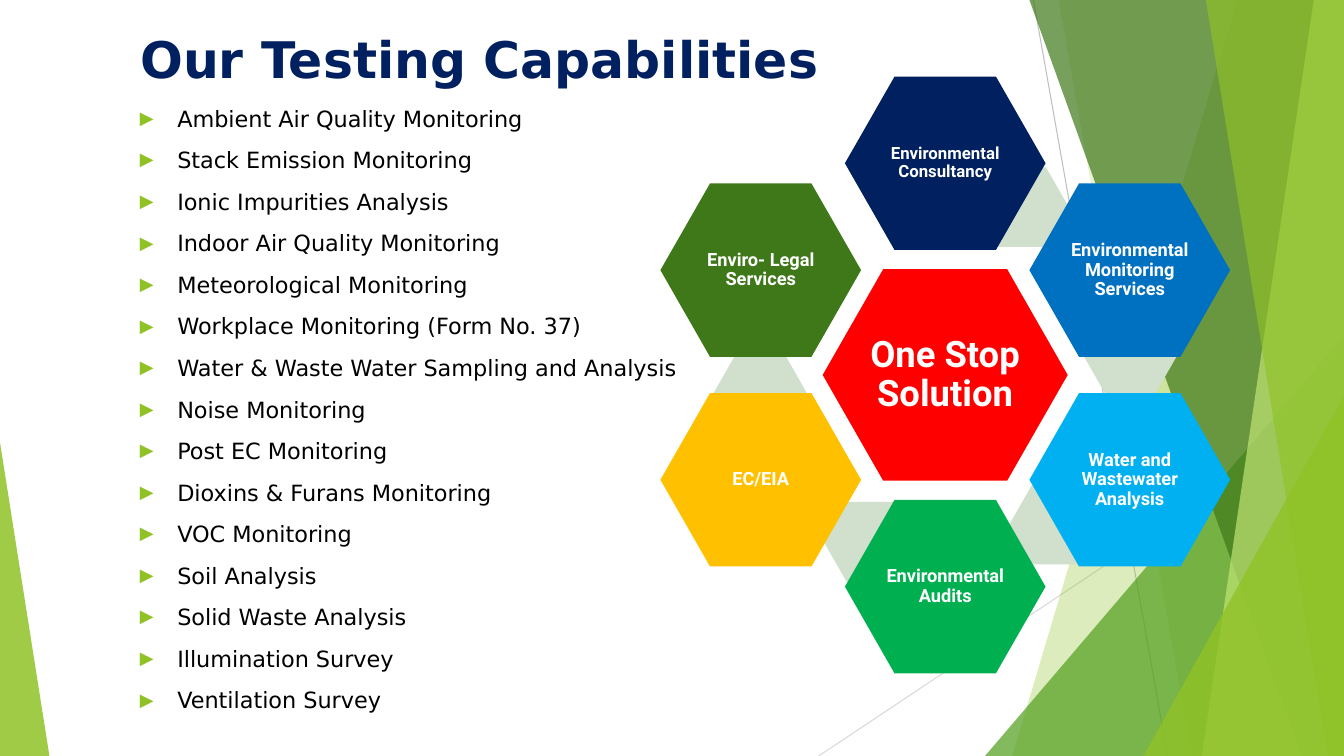
"""Build the testing capabilities slide with its ring of service hexagons."""
from dataclasses import dataclass
from typing import Optional

from lxml.etree import SubElement
from pptx import Presentation
from pptx.dml.color import RGBColor
from pptx.enum.shapes import MSO_CONNECTOR, MSO_SHAPE
from pptx.enum.text import MSO_ANCHOR, MSO_AUTO_SIZE, PP_ALIGN
from pptx.oxml.ns import qn
from pptx.util import Inches, Pt

WIDTH, HEIGHT = 13.33, 7.5
BODY_FONT, LABEL_FONT = "DejaVu Sans", "Roboto"

WHITE = RGBColor(0xFF, 0xFF, 0xFF)
BLACK = RGBColor(0x00, 0x00, 0x00)
NAVY = RGBColor(0x00, 0x20, 0x60)
BLUE = RGBColor(0x00, 0x70, 0xC0)
SKY = RGBColor(0x00, 0xB0, 0xF0)
GREEN = RGBColor(0x00, 0xB0, 0x50)
AMBER = RGBColor(0xFF, 0xC0, 0x00)
RED = RGBColor(0xFF, 0x00, 0x00)
FOREST = RGBColor(0x3F, 0x78, 0x19)
LEAF = RGBColor(0x54, 0xA0, 0x21)
LIME = RGBColor(0x90, 0xC2, 0x26)
PALE_LIME = RGBColor(0xC0, 0xE4, 0x74)
SAGE = RGBColor(0xD1, 0xDF, 0xCD)
MID_GREY = RGBColor(0xBF, 0xBF, 0xBF)
LIGHT_GREY = RGBColor(0xD9, 0xD9, 0xD9)


@dataclass
class Ray:
    """A thin background line."""
    start: tuple[float, float]
    end: tuple[float, float]
    color: RGBColor


@dataclass
class Panel:
    """A slanted panel reaching from its left edge to the right of the slide."""
    top_x: float
    bottom_x: float
    color: RGBColor
    opacity: int


@dataclass
class Wedge:
    """A right triangle standing on the bottom of the slide."""
    left: float
    top: float
    width: float
    peak: float
    color: RGBColor
    opacity: int


@dataclass
class Service:
    """A labelled hexagon, with the small hexagon that lies behind it."""
    label: str
    left: float
    top: float
    color: RGBColor
    chip: Optional[tuple[float, float]] = None
    size: float = 13
    width: float = 1.99
    height: float = 1.72
    inset: float = 0.02


RAYS = [
    Ray((10.25, 0), (11.58, HEIGHT), MID_GREY),
    Ray((WIDTH, 4.03), (8.12, HEIGHT), LIGHT_GREY),
]
BACKDROP = [
    Panel(12.27, 10.04, LIME, 30),
    Panel(10.5, 11.82, LIME, 20),
    Wedge(9.77, 3.33, 3.56, 1, LEAF, 72),
    Panel(10.21, 12.91, FOREST, 70),
    Panel(13.03, 11.92, PALE_LIME, 70),
    Panel(11.96, 13.17, LIME, 65),
    Wedge(11.34, 3.93, 1.99, 1, LIME, 80),
    Wedge(0, 4.39, 0.49, 0, LIME, 85),
]
LEFT_X, MIDDLE_X, RIGHT_X = 6.55, 8.38, 10.21
SERVICES = [
    Service("One Stop Solution", 8.16, 2.67, RED, None, 26, 2.43, 2.1, 0.04),
    Service("Environmental Consultancy", MIDDLE_X, 0.76, NAVY, (9.68, 1.66), 12),
    Service("Environmental Monitoring Services", RIGHT_X, 1.82, BLUE, (10.75, 3.14)),
    Service("Water and Wastewater Analysis", RIGHT_X, 3.9, SKY, (10.01, 4.81)),
    Service("Environmental Audits", MIDDLE_X, 4.96, GREEN, (8.17, 4.98)),
    Service("EC/EIA", LEFT_X, 3.9, AMBER, (7.08, 3.5)),
    Service("Enviro- Legal Services", LEFT_X, 1.82, FOREST),
]
CAPABILITIES = [
    "Ambient Air Quality Monitoring",
    "Stack Emission Monitoring",
    "Ionic Impurities Analysis",
    "Indoor Air Quality Monitoring",
    "Meteorological Monitoring",
    "Workplace Monitoring (Form No. 37)",
    "Water & Waste Water Sampling and Analysis",
    "Noise Monitoring",
    "Post EC Monitoring",
    "Dioxins & Furans Monitoring",
    "VOC Monitoring",
    "Soil Analysis",
    "Solid Waste Analysis",
    "Illumination Survey",
    "Ventilation Survey",
]


def paint(shape, color: RGBColor, opacity: int = 100) -> None:
    """Give a shape a plain fill without outline or shadow."""
    shape.shadow.inherit = False
    shape.line.fill.background()
    shape.fill.solid()
    shape.fill.fore_color.rgb = color
    if opacity < 100:
        tint = shape.fill._xPr.find(qn("a:solidFill"))[0]
        SubElement(tint, qn("a:alpha"), val=str(opacity * 1000))


def add_run(p, text: str, font: str, size: float, color: RGBColor, bold: bool = False) -> None:
    """Append a formatted run to a paragraph."""
    r = p.add_run()
    r.text = text
    r.font.name, r.font.size, r.font.bold = font, Pt(size), bold
    r.font.color.rgb = color


def add_ray(s, ray: Ray) -> None:
    """Draw one background line."""
    line = s.shapes.add_connector(MSO_CONNECTOR.STRAIGHT, *map(Inches, ray.start + ray.end))
    line.line.color.rgb = ray.color
    line.line.width = Pt(0.75)
    SubElement(line._element.spPr, qn("a:effectLst"))


def add_panel(s, panel: Panel) -> None:
    """Draw one slanted panel."""
    outline = s.shapes.build_freeform(Inches(panel.top_x), 0)
    corners = [(WIDTH, 0), (WIDTH, HEIGHT), (panel.bottom_x, HEIGHT)]
    outline.add_line_segments([(Inches(x), Inches(y)) for x, y in corners])
    paint(outline.convert_to_shape(), panel.color, panel.opacity)


def add_wedge(s, wedge: Wedge) -> None:
    """Draw one triangle down to the bottom edge."""
    box = (wedge.left, wedge.top, wedge.width, HEIGHT - wedge.top)
    sp = s.shapes.add_shape(MSO_SHAPE.ISOSCELES_TRIANGLE, *map(Inches, box))
    sp.adjustments[0] = wedge.peak
    paint(sp, wedge.color, wedge.opacity)


def add_hexagon(s, left: float, top: float, width: float, height: float, color: RGBColor):
    """Draw a filled hexagon and return it."""
    sp = s.shapes.add_shape(MSO_SHAPE.HEXAGON, *map(Inches, (left, top, width, height)))
    sp.adjustments[0] = 0.286
    paint(sp, color)
    return sp


def add_service(s, service: Service) -> None:
    """Draw a service hexagon with its label."""
    if service.chip:
        add_hexagon(s, *service.chip, 0.92, 0.79, SAGE)
    tf = add_hexagon(s, service.left, service.top, service.width, service.height,
                     service.color).text_frame
    tf.word_wrap, tf.vertical_anchor = True, MSO_ANCHOR.MIDDLE
    tf.margin_left = tf.margin_right = tf.margin_top = tf.margin_bottom = Inches(service.inset)
    p = tf.paragraphs[0]
    p.alignment, p.line_spacing = PP_ALIGN.CENTER, 0.9
    add_run(p, service.label, LABEL_FONT, service.size, WHITE, True)


def add_title(s) -> None:
    """Place and format the title."""
    title = s.shapes.title
    title.left, title.top, title.width, title.height = map(Inches, (1.29, 0.23, 10.03, 1.53))
    tf = title.text_frame
    tf.vertical_anchor, tf.auto_size = MSO_ANCHOR.TOP, MSO_AUTO_SIZE.NONE
    p = tf.paragraphs[0]
    p.alignment = PP_ALIGN.LEFT
    add_run(p, "Our Testing Capabilities", BODY_FONT, 36, NAVY, True)


def add_capabilities(s) -> None:
    """Write the bulleted list of capabilities."""
    tf = s.shapes.add_textbox(*map(Inches, (1.29, 0.99, 11.34, 6.12))).text_frame
    tf.word_wrap = True
    for i, capability in enumerate(CAPABILITIES):
        p = tf.add_paragraph() if i else tf.paragraphs[0]
        pPr = p._p.get_or_add_pPr()
        pPr.set("marL", str(Inches(0.37)))
        pPr.set("indent", str(-Inches(0.37)))
        SubElement(SubElement(pPr, qn("a:buClr")), qn("a:srgbClr"), val=str(LIME))
        SubElement(pPr, qn("a:buSzPct"), val="80000")
        SubElement(pPr, qn("a:buFont"), typeface=BODY_FONT)
        SubElement(pPr, qn("a:buChar"), char="▶")
        p.space_before = Pt(10.5 if i else 0)
        add_run(p, capability, BODY_FONT, 16, BLACK)


def main() -> None:
    """Build and save the presentation."""
    prs = Presentation()
    prs.slide_width, prs.slide_height = Inches(WIDTH), Inches(HEIGHT)
    s = prs.slides.add_slide(prs.slide_layouts[5])
    for ray in RAYS:
        add_ray(s, ray)
    for part in BACKDROP:
        if isinstance(part, Panel):
            add_panel(s, part)
        else:
            add_wedge(s, part)
    add_title(s)
    add_capabilities(s)
    for service in SERVICES:
        add_service(s, service)
    prs.save("out.pptx")


if __name__ == "__main__":
    main()
